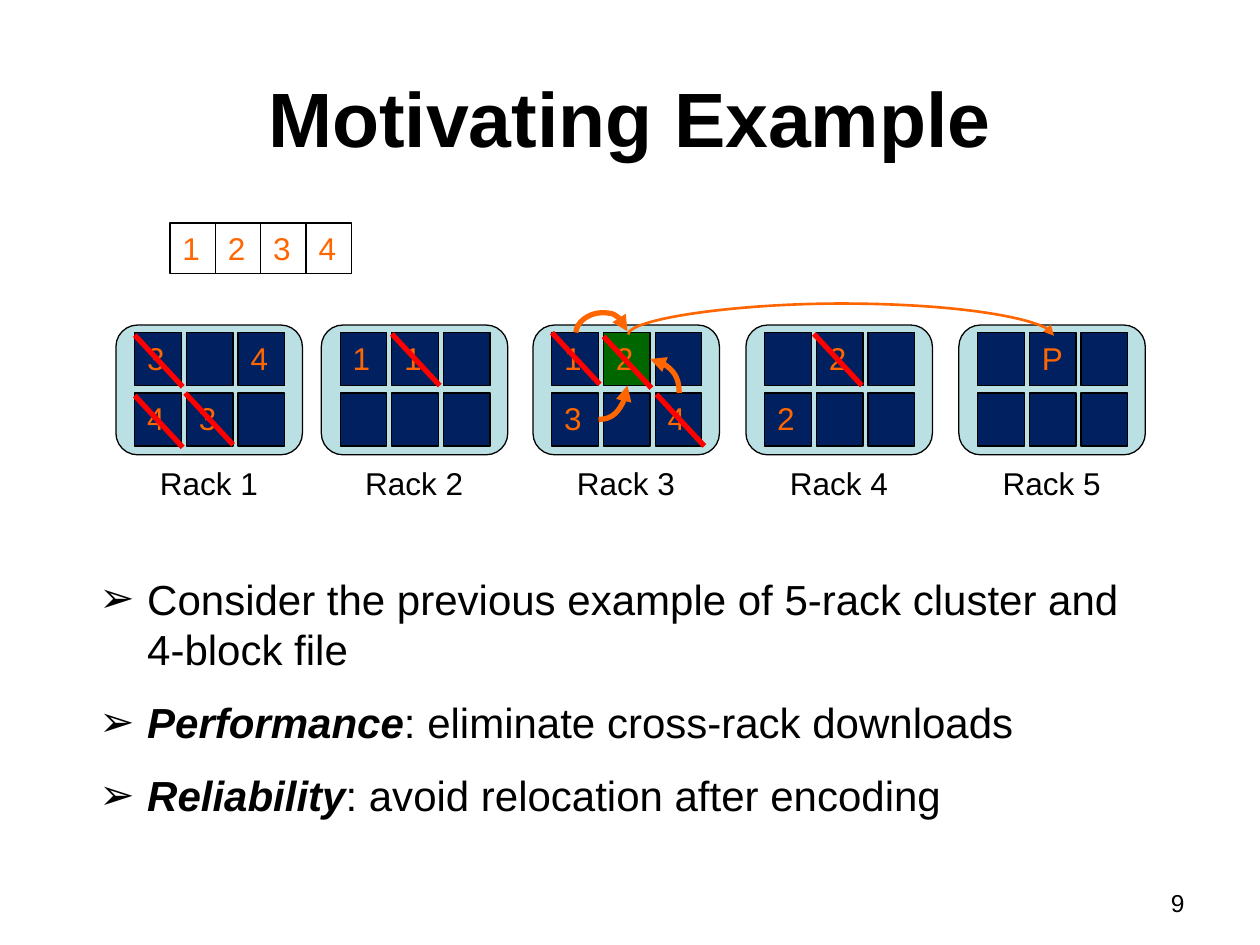
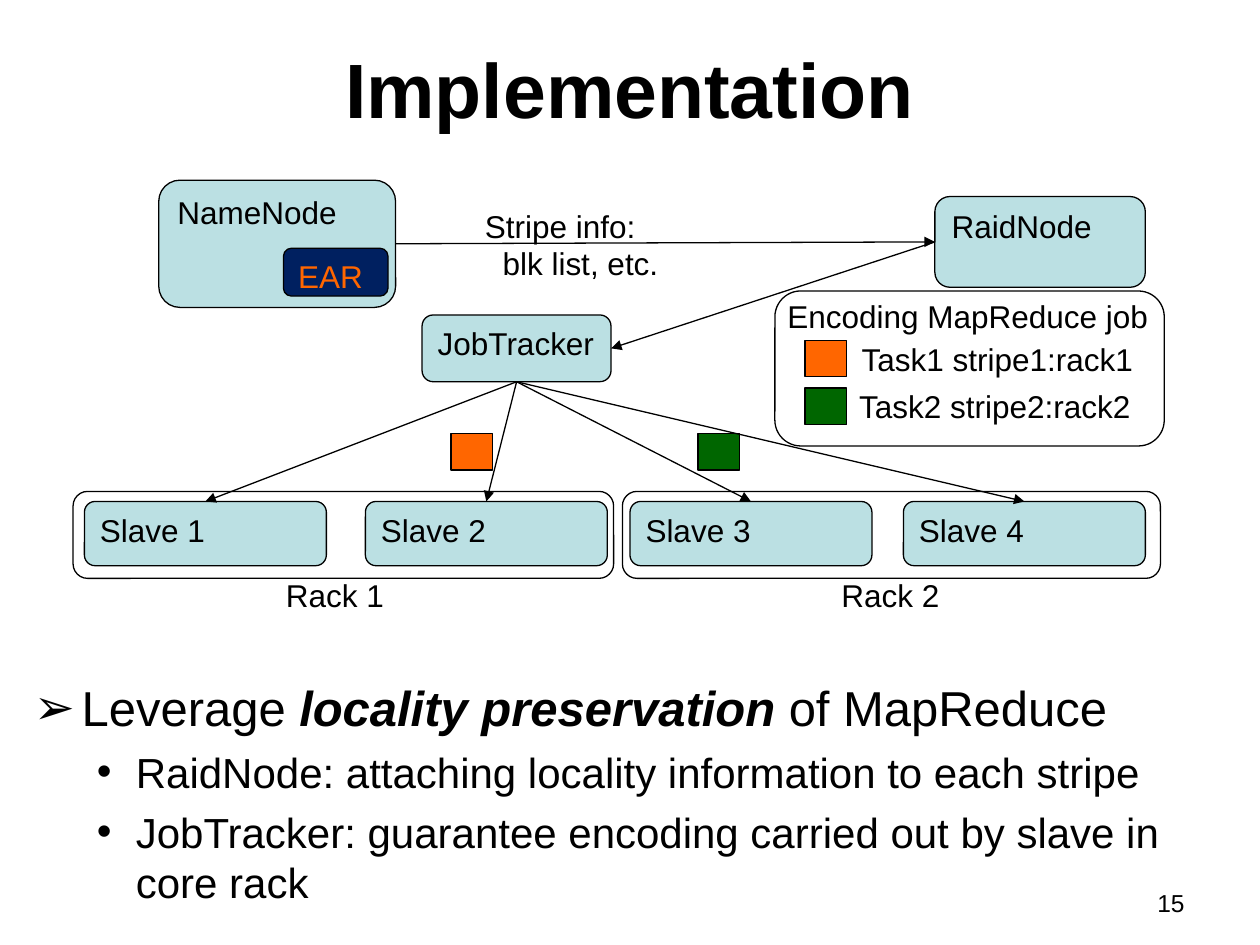
import pptx
import pptx.util
import pptx.dml.color
import pptx.enum.shapes
import pptx.enum.text
import pptx.oxml.ns
import lxml.etree

Inches = pptx.util.Inches
Pt = pptx.util.Pt
qn = pptx.oxml.ns.qn
Kind = pptx.enum.shapes.MSO_SHAPE
Link = pptx.enum.shapes.MSO_CONNECTOR
Align = pptx.enum.text.PP_ALIGN
Anchor = pptx.enum.text.MSO_ANCHOR

BLACK, ORANGE, GREEN, RED = "000000", "FF6600", "006600", "FF0000"
NAVY, PALE = "002060", "BBE0E3"
TOP, LEFT, BOTTOM, RIGHT = range(4)


def color(code):
    return pptx.dml.color.RGBColor.from_string(code)


def add(node, tag, **attrs):
    return lxml.etree.SubElement(node, qn(tag), **attrs)


class Deck:
    font = "Arial"

    def __init__(self):
        self.file = pptx.Presentation()
        self.file.slide_width = Inches(10)
        self.file.slide_height = Inches(7.5)

    def start(self, title, height, number):
        self.slide = self.file.slides.add_slide(self.file.slide_layouts[5])
        self.shapes = self.slide.shapes
        head = self.shapes.title
        head.left, head.top = Inches(0.5), Inches(0.3)
        head.width, head.height = Inches(9), Inches(height)
        head.text_frame.text = title
        head.text_frame.vertical_anchor = Anchor.MIDDLE
        self.style(head.text_frame, 44, align=Align.CENTER, bold=True)
        self.note(number, 7.17, 7, 2.33, 0.35, 14, Align.RIGHT)

    def style(self, frame, size=18, ink=BLACK, align=Align.LEFT, bold=None):
        for para in frame.paragraphs:
            para.alignment = align
            for run in para.runs:
                self.paint(run, size, ink, bold)

    def paint(self, run, size, ink=BLACK, bold=None, slant=None):
        run.font.name = self.font
        run.font.size = Pt(size)
        run.font.bold = bold
        run.font.italic = slant
        run.font.color.rgb = color(ink)

    def box(self, kind, x, y, w, h, fill=None, text="", ink=BLACK):
        shape = self.shapes.add_shape(kind, Inches(x), Inches(y), Inches(w), Inches(h))
        shape.shadow.inherit = False
        if fill:
            shape.fill.solid()
            shape.fill.fore_color.rgb = color(fill)
        else:
            shape.fill.background()
        shape.line.color.rgb = color(BLACK)
        shape.line.width = Pt(0.75)
        if text:
            shape.text_frame.text = text
            shape.text_frame.vertical_anchor = Anchor.TOP
            self.style(shape.text_frame, ink=ink)
        return shape

    def note(self, text, x, y, w, h=0.4, size=18, align=Align.LEFT):
        area = self.shapes.add_textbox(Inches(x), Inches(y), Inches(w), Inches(h))
        area.text_frame.text = text
        area.text_frame.word_wrap = align == Align.RIGHT
        self.style(area.text_frame, size, align=align)
        return area

    def line(self, x1, y1, x2, y2, ink=BLACK, width=0.75, arrow=False, kind=Link.STRAIGHT):
        line = self.shapes.add_connector(kind, Inches(x1), Inches(y1), Inches(x2), Inches(y2))
        line.line.color.rgb = color(ink)
        line.line.width = Pt(width)
        if arrow:
            add(line.line._get_or_add_ln(), "a:tailEnd", type="triangle")
        add(line._element.spPr, "a:effectLst")
        return line

    def join(self, first, side, last, end):
        line = self.line(0, 0, 1, 1, arrow=True)
        line.begin_connect(first, side)
        line.end_connect(last, end)

    def curve(self, x1, y1, x2, y2, turn, width, bend=None):
        line = self.line(x1, y1, x2, y2, ORANGE, width, True, Link.CURVE)
        props = line._element.spPr
        props.find(qn("a:xfrm")).set("rot", str(turn * 60000))
        shape = props.find(qn("a:prstGeom"))
        if bend is None:
            shape.set("prst", "curvedConnector2")
        else:
            guides = shape.find(qn("a:avLst"))
            if guides is None:
                guides = add(shape, "a:avLst")
            add(guides, "a:gd", name="adj1", fmla=f"val {bend * 100000}")

    def list(self, x, y, w, h, items):
        area = self.shapes.add_textbox(Inches(x), Inches(y), Inches(w), Inches(h))
        frame = area.text_frame
        frame.word_wrap = True
        for index, (level, size, parts) in enumerate(items):
            para = frame.paragraphs[0] if index == 0 else frame.add_paragraph()
            mark, margin, hang, gap = (("➢", 0.38, 0.38, 13), ("•", 0.81, 0.31, 5.5))[level]
            para.level = level
            para.space_before = Pt(gap if index else 0)
            props = para._p.get_or_add_pPr()
            props.set("marL", str(Inches(margin)))
            props.set("indent", str(-Inches(hang)))
            add(props, "a:buFont", typeface=self.font)
            add(props, "a:buChar", char=mark)
            for text, strong in parts:
                run = para.add_run()
                run.text = text
                self.paint(run, size, BLACK, strong, strong)


def example(deck):
    deck.start("Motivating Example", 1.25, "9")
    for index, block in enumerate("1234"):
        deck.box(Kind.FLOWCHART_PROCESS, 1.35 + 0.36 * index, 1.77, 0.36, 0.4, None, block, ORANGE)

    racks = [(0.92, "3 4", "43 "), (2.55, "11 ", "   "), (4.23, "12 ", "3 4"),
             (5.92, " 2 ", "2  "), (7.61, " P ", "   ")]
    for number, (left, *rows) in enumerate(racks, 1):
        deck.box(Kind.FLOWCHART_ALTERNATE_PROCESS, left, 2.58, 1.48, 1.03, PALE)
        for row, blocks in enumerate(rows):
            for col, block in enumerate(blocks):
                fill = GREEN if (number, row, col) == (3, 0, 1) else NAVY
                deck.box(Kind.FLOWCHART_PROCESS, left + 0.15 + 0.41 * col, 2.64 + 0.48 * row,
                         0.37, 0.42, fill, block.strip(), ORANGE)
        deck.note(f"Rack {number}", left + 0.25, 3.63, 0.99)

    for x, y in [(1.07, 2.66), (1.07, 3.14), (1.47, 3.12), (3.11, 2.65),
                 (4.38, 2.64), (4.79, 2.67), (5.21, 3.13), (6.46, 2.65)]:
        deck.line(x, y, x + 0.38, y + 0.41, RED, 3)

    deck.curve(6.68, 0.97, 6.67, 4.35, 270, 1.5, -25)
    deck.curve(5.14, 3.1, 5.41, 2.87, 270, 3)
    deck.curve(4.75, 3.33, 4.98, 3.06, 0, 3)
    deck.curve(4.78, 2.84, 4.77, 2.43, 90, 3, 16)

    deck.list(0.69, 4.5, 8.62, 2.58, [
        (0, 24, [("Consider the previous example of 5-rack cluster and 4-block file", False)]),
        (0, 24, [("Performance", True), (": eliminate cross-rack downloads", False)]),
        (0, 24, [("Reliability", True), (": avoid relocation after encoding", False)]),
    ])


def system(deck):
    deck.start("Implementation", 0.79, "15")
    stripe = deck.note("Stripe info:\nblk list, etc.", 3.75, 1.59, 1.59, 0.71)
    stripe.text_frame.paragraphs[1]._p.get_or_add_pPr().set("marL", str(Inches(0.14)))

    deck.box(Kind.ROUNDED_RECTANGLE, 6.15, 2.31, 3.09, 1.23)
    deck.note("Encoding MapReduce job", 6.15, 2.31, 3.09)
    deck.note("Task1 stripe1:rack1", 6.74, 2.65, 2.38)
    deck.note("Task2 stripe2:rack2", 6.72, 3.02, 2.38)
    for x, y, fill in [(3.58, 3.44, ORANGE), (5.54, 3.44, GREEN),
                       (6.39, 2.7, ORANGE), (6.39, 3.08, GREEN)]:
        deck.box(Kind.RECTANGLE, x, y, 0.33, 0.29, fill)

    soft = Kind.FLOWCHART_ALTERNATE_PROCESS
    name = deck.box(soft, 1.26, 1.43, 1.88, 1.01, PALE, "NameNode")
    raid = deck.box(soft, 7.42, 1.56, 1.67, 0.72, PALE, "RaidNode")
    job = deck.box(soft, 3.35, 2.5, 1.5, 0.53, PALE, "JobTracker")
    deck.box(Kind.ROUNDED_RECTANGLE, 2.25, 1.97, 0.83, 0.38, NAVY, "EAR", ORANGE)

    deck.join(name, RIGHT, raid, LEFT)
    deck.join(raid, LEFT, job, RIGHT)
    for number, left in enumerate([0.67, 2.9, 5, 7.17], 1):
        slave = deck.box(soft, left, 3.98, 1.92, 0.51, PALE, f"Slave {number}")
        deck.join(job, BOTTOM, slave, TOP)
    for number, (left, width, label) in enumerate([(0.58, 4.29, 2.17), (4.94, 4.27, 6.58)], 1):
        deck.box(soft, left, 3.9, width, 0.69)
        deck.note(f"Rack {number}", label, 4.52, 0.99)

    deck.list(0.17, 5.33, 9.67, 2.01, [
        (0, 28, [("Leverage ", False), ("locality preservation ", True), ("of MapReduce", False)]),
        (1, 24, [("RaidNode: attaching locality information to each stripe", False)]),
        (1, 24, [("JobTracker: guarantee encoding carried out by slave in core rack", False)]),
    ])


def main():
    deck = Deck()
    example(deck)
    system(deck)
    deck.file.save("out.pptx")


if __name__ == "__main__":
    main()
